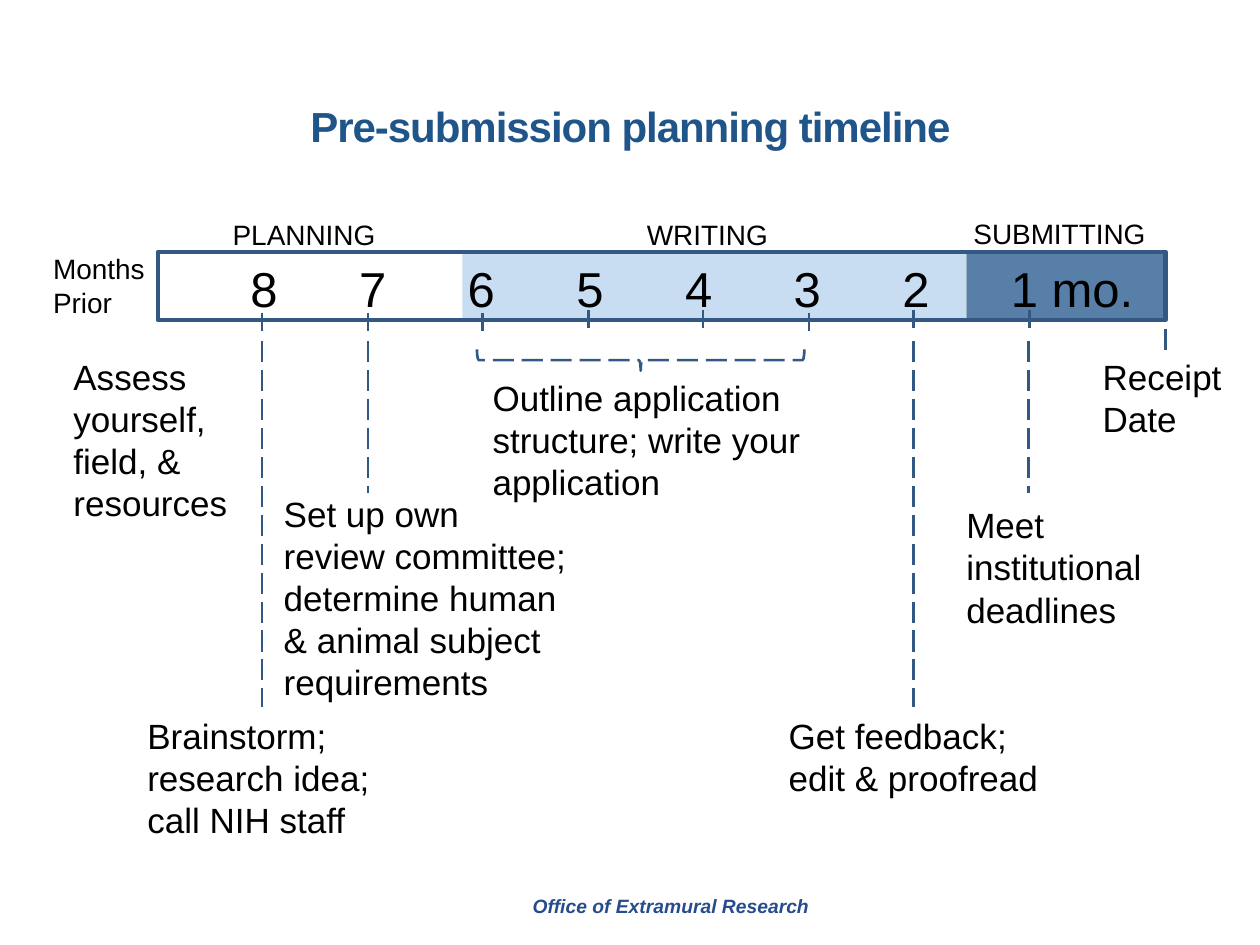
from lxml import etree
from pptx import Presentation
from pptx.dml.color import RGBColor
from pptx.enum.dml import MSO_LINE_DASH_STYLE as Dash
from pptx.enum.shapes import MSO_CONNECTOR_TYPE as Connector
from pptx.enum.shapes import MSO_SHAPE as Preset
from pptx.enum.text import MSO_ANCHOR as Anchor
from pptx.enum.text import PP_ALIGN as Align
from pptx.oxml.ns import qn
from pptx.util import Cm, Pt

FONT = "Arial"
BLACK = RGBColor(0x00, 0x00, 0x00)
NAVY = RGBColor(0x34, 0x58, 0x84)
BLUE = RGBColor(0x20, 0x55, 0x8A)
PALE_BLUE = RGBColor(0xC8, 0xDD, 0xF2)
FOOTER_BLUE = RGBColor(0x27, 0x4C, 0x8B)

BAR_LEFT, BAR_TOP, BAR_WIDTH, BAR_HEIGHT = 3.18, 5.08, 20.32, 1.37
FIRST_MONTH, MONTH_STEP = 1.87, 2.19
MONTHS = ["8", "7", "6", "5", "4", "3", "2", "1 mo."]
TICKS = [(5.28, 6.3), (7.42, 6.3), (9.73, 6.3), (11.86, 6.25),
         (14.17, 6.25), (16.31, 6.3), (18.42, 6.25), (20.75, 6.25)]
TICK_LENGTH = 0.37
LEADERS = [(5.28, 6.88, 14.25), (7.42, 6.88, 9.93), (18.42, 6.88, 14.25),
           (20.73, 6.88, 9.93), (23.5, 6.63, 7.14)]
PHASES = [("PLANNING", 3.18, 4.39, 6.15), ("WRITING", 9.32, 4.39, 10.13),
          ("SUBMITTING", 19.48, 4.37, 4.01)]
NOTES = [
    (["Receipt", "Date"], 22.23, 7.16, 2.54, 1.7),
    (["Assess", "yourself, field, & resources"], 1.48, 7.16, 3.38, 3.43),
    (["Brainstorm; research idea; call NIH staff"], 2.97, 14.4, 4.65, 2.57),
    (["Set up own review committee; determine human & animal subject "
      "requirements"], 5.72, 9.93, 5.72, 4.27),
    (["Outline application structure; write your application"],
     9.93, 7.59, 6.45, 2.57),
    (["Get feedback; edit & proofread"], 15.9, 14.4, 5.03, 1.7),
    (["Meet institutional deadlines"], 19.48, 10.16, 3.71, 2.57),
]


def add_run(paragraph, text, size, color=BLACK, bold=False, italic=False):
    run = paragraph.add_run()
    run.text = text
    font = run.font
    font.name, font.size = FONT, Pt(size)
    font.bold, font.italic = bold, italic
    font.color.rgb = color
    return run


def set_margins(frame, left=0, top=0, right=0, bottom=0):
    frame.margin_left, frame.margin_top = Cm(left), Cm(top)
    frame.margin_right, frame.margin_bottom = Cm(right), Cm(bottom)
    frame.word_wrap = True


def add_text(slide, lines, left, top, width, height, size, right=0,
             align=Align.LEFT):
    box = slide.shapes.add_textbox(Cm(left), Cm(top), Cm(width), Cm(height))
    frame = box.text_frame
    set_margins(frame, right=right)
    for index, line in enumerate(lines):
        paragraph = frame.add_paragraph() if index else frame.paragraphs[0]
        paragraph.alignment = align
        add_run(paragraph, line, size)


def add_preset(slide, preset, left, top, width, height, fill=None, line=None):
    shape = slide.shapes.add_shape(
        preset, Cm(left), Cm(top), Cm(width), Cm(height))
    shape.shadow.inherit = False
    if fill is None:
        shape.fill.background()
    else:
        shape.fill.solid()
        shape.fill.fore_color.rgb = fill
    if line is None:
        shape.line.fill.background()
    else:
        shape.line.color.rgb = NAVY
        shape.line.width = Pt(line)
    return shape


def add_vertical(slide, x, top, bottom, dashed=False):
    connector = slide.shapes.add_connector(
        Connector.STRAIGHT, Cm(x), Cm(top), Cm(x), Cm(bottom))
    connector.line.color.rgb = NAVY
    connector.line.width = Pt(1.5)
    if dashed:
        connector.line.dash_style = Dash.LONG_DASH
    properties = connector._element.find(qn("p:spPr"))
    etree.SubElement(properties, qn("a:effectLst"))


def add_title(slide):
    title = slide.shapes.title
    title.left, title.top = Cm(0.74), Cm(1.9)
    title.width, title.height = Cm(23.93), Cm(2.29)
    frame = title.text_frame
    frame.vertical_anchor = Anchor.TOP
    paragraph = frame.paragraphs[0]
    paragraph.alignment = Align.CENTER
    run = add_run(paragraph, "Pre-submission planning timeline", 24, BLUE,
                  bold=True)
    run.font._element.set("spc", "-60")


def add_footer(slide):
    box = slide.shapes.add_textbox(Cm(10.49), Cm(17.91), Cm(7.09), Cm(0.74))
    box.text_frame.word_wrap = True
    add_run(box.text_frame.paragraphs[0], "Office of Extramural Research", 11,
            FOOTER_BLUE, bold=True, italic=True)


def add_bar(slide):
    submitting = add_preset(slide, Preset.RECTANGLE, 19.48, 5.11, 4.01,
                            BAR_HEIGHT, BLUE)
    color = submitting.fill._xPr.find(".//" + qn("a:srgbClr"))
    etree.SubElement(color, qn("a:alpha"), val="75000")
    add_preset(slide, Preset.RECTANGLE, 9.32, 5.11, 10.16, BAR_HEIGHT,
               PALE_BLUE)
    bar = add_preset(slide, Preset.RECTANGLE, BAR_LEFT, BAR_TOP, BAR_WIDTH,
                     BAR_HEIGHT, line=2.5)
    frame = bar.text_frame
    set_margins(frame)
    frame.vertical_anchor = Anchor.TOP
    paragraph = frame.paragraphs[0]
    paragraph.alignment = Align.LEFT
    tabs = etree.SubElement(paragraph._p.get_or_add_pPr(), qn("a:tabLst"))
    for index in range(len(MONTHS)):
        position = Cm(FIRST_MONTH + index * MONTH_STEP)
        etree.SubElement(tabs, qn("a:tab"), pos=str(int(position)), algn="l")
    add_run(paragraph, "\t", 32)
    add_run(paragraph, "\t".join(MONTHS), 28)


def add_brace(slide):
    brace = add_preset(slide, Preset.RIGHT_BRACE, 12.7, 3.96, 0.43, 6.6,
                       line=1.5)
    brace.line.dash_style = Dash.LONG_DASH
    brace.rotation = 90


def main():
    presentation = Presentation()
    presentation.slide_width, presentation.slide_height = Cm(25.4), Cm(19.05)
    slide = presentation.slides.add_slide(presentation.slide_layouts[5])
    add_footer(slide)
    add_bar(slide)
    add_title(slide)
    add_text(slide, ["Months Prior"], 1.07, 5.08, 2.11, 1.37, 16, right=0.25)
    for x, top in TICKS:
        add_vertical(slide, x, top, top + TICK_LENGTH)
    for x, top, bottom in LEADERS:
        add_vertical(slide, x, top, bottom, dashed=True)
    add_brace(slide)
    for lines, left, top, width, height in NOTES:
        add_text(slide, lines, left, top, width, height, 20)
    for name, left, top, width in PHASES:
        add_text(slide, [name], left, top, width, 0.69, 16, right=0.25,
                 align=Align.CENTER)
    presentation.save("out.pptx")


if __name__ == "__main__":
    main()
